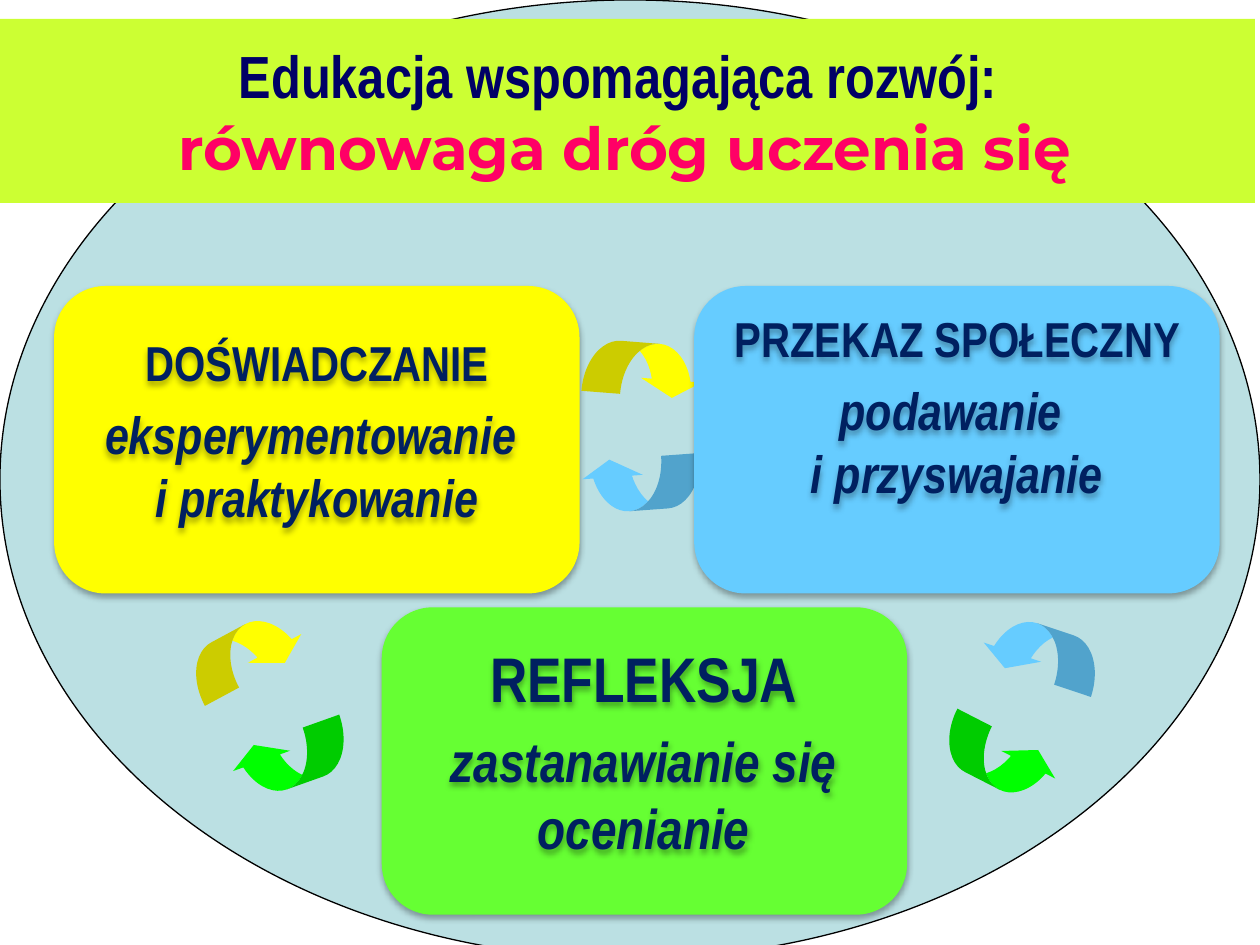
"""Build the slide on the balance of three ways of learning."""
from lxml import etree
from pptx import Presentation, util as u
from pptx.dml.color import RGBColor
from pptx.enum import shapes, text
from pptx.oxml.ns import qn

COLOURS = {
    "oval": "BBE0E3", "outline": "000000", "banner": "CCFF33",
    "title": "000066", "accent": "FF0066", "ink": "002060",
    "yellow": "FFFF00", "blue": "66CCFF", "lime": "66FF33", "green": "00FF00",
}
NARROW = "Arial Narrow"
CARD_SIZE = (4.17, 2.44)
ARROW_SIZE = (0.42, 0.96)
ARROW_ADJUSTMENTS = (0.733, 1.466, 0.333)
CARDS = [
    ((0.43, 2.27), "yellow", (0.65, 2.59, 3.73, 1.74),
     ("DOŚWIADCZANIE", 28), ("eksperymentowanie \ni praktykowanie", 30)),
    ((5.51, 2.27), "blue", (5.73, 2.4, 3.73, 2.19),
     ("PRZEKAZ SPOŁECZNY ", 28), ("podawanie \ni przyswajanie", 30)),
    ((3.03, 4.82), "lime", (3.22, 5.03, 3.78, 2.04),
     ("REFLEKSJA", 36), ("zastanawianie się ocenianie", 32)),
]
ARROWS = [
    ((4.9, 2.45), 274.5, "yellow", False),
    ((4.88, 3.36), 85.8, "blue", False),
    ((2.1, 5.55), 70.4, "green", False),
    ((1.74, 4.71), 241.7, "yellow", False),
    ((8.06, 4.7), 108.5, "blue", True),
    ((7.72, 5.55), 297.1, "green", True),
]


def colour(name):
    """Return the named colour."""
    return RGBColor.from_string(COLOURS[name])


def inches(values):
    """Convert numbers to inch lengths."""
    return [u.Inches(value) for value in values]


def add_figure(page, kind, place, fill):
    """Add a filled preset shape without outline or shadow."""
    figure = page.shapes.add_shape(kind, *inches(place))
    figure.shadow.inherit = False
    figure.fill.solid()
    figure.fill.fore_color.rgb = colour(fill)
    figure.line.fill.background()
    return figure


def add_shadow(figure):
    """Give a shape a soft shadow straight below it."""
    figure.shadow.inherit = False
    effects = figure._element.spPr.find(qn("a:effectLst"))
    shadow = etree.SubElement(effects, qn("a:outerShdw"), blurRad=str(u.Pt(3.5)),
                              dist=str(u.Pt(2.2)), dir="5400000", rotWithShape="0")
    tint = etree.SubElement(shadow, qn("a:srgbClr"), val=COLOURS["outline"])
    etree.SubElement(tint, qn("a:alpha"), val="32000")


def format_span(span, ink, **values):
    """Apply font values and a colour to a run."""
    for name, value in values.items():
        setattr(span.font, name, value)
    span.font.color.rgb = colour(ink)


def add_card(page, corner, fill, text_place, heading, detail):
    """Add a rounded card with its heading and italic detail."""
    add_shadow(add_figure(page, shapes.MSO_SHAPE.ROUNDED_RECTANGLE,
                          corner + CARD_SIZE, fill))
    box = page.shapes.add_textbox(*inches(text_place))
    add_shadow(box)
    frame = box.text_frame
    frame.word_wrap = True
    paras = (frame.paragraphs[0], frame.add_paragraph())
    for para, (words, size), italic in zip(paras, (heading, detail), (False, True)):
        para.text = words
        para.alignment = text.PP_ALIGN.CENTER
        para.space_after = u.Pt(6)
        for span in para.runs:
            format_span(span, "ink", name=NARROW, size=u.Pt(size),
                        bold=True, italic=italic)


def add_arrow(page, corner, rotation, fill, flipped):
    """Add a curved arrow between two cards."""
    arrow = add_figure(page, shapes.MSO_SHAPE.CURVED_LEFT_ARROW,
                       corner + ARROW_SIZE, fill)
    arrow.rotation = rotation
    for index, value in enumerate(ARROW_ADJUSTMENTS):
        arrow.adjustments[index] = value
    if flipped:
        arrow._element.spPr.find(qn("a:xfrm")).set("flipH", "1")


def add_title(page):
    """Turn the title placeholder into the two-line banner."""
    title = page.shapes.title
    page.shapes._spTree.append(title._element)
    title.left, title.top, title.width, title.height = inches((-0.04, 0.15, 10, 1.46))
    title.fill.solid()
    title.fill.fore_color.rgb = colour("banner")
    frame = title.text_frame
    for name, value in {"word_wrap": True, "auto_size": text.MSO_AUTO_SIZE.NONE,
                        "vertical_anchor": text.MSO_ANCHOR.MIDDLE}.items():
        setattr(frame, name, value)
    para = frame.paragraphs[0]
    para.text = "Edukacja wspomagająca rozwój: \nrównowaga dróg uczenia się"
    para.alignment = text.PP_ALIGN.CENTER
    for span, font, ink in zip(para.runs, (NARROW, "Montserrat"), ("title", "accent")):
        format_span(span, ink, name=font, size=u.Pt(34), bold=True)


def main():
    """Assemble and save the slide."""
    deck = Presentation()
    deck.slide_width, deck.slide_height = inches((10, 7.5))
    page = deck.slides.add_slide(deck.slide_layouts[5])
    oval = add_figure(page, shapes.MSO_SHAPE.OVAL, (0, 0, 10, 7.61), "oval")
    oval.line.color.rgb = colour("outline")
    oval.line.width = u.Pt(0.75)
    add_card(page, *CARDS[0])
    for arrow in ARROWS:
        add_arrow(page, *arrow)
    add_title(page)
    for card in CARDS[1:]:
        add_card(page, *card)
    deck.save("out.pptx")


if __name__ == "__main__":
    main()
